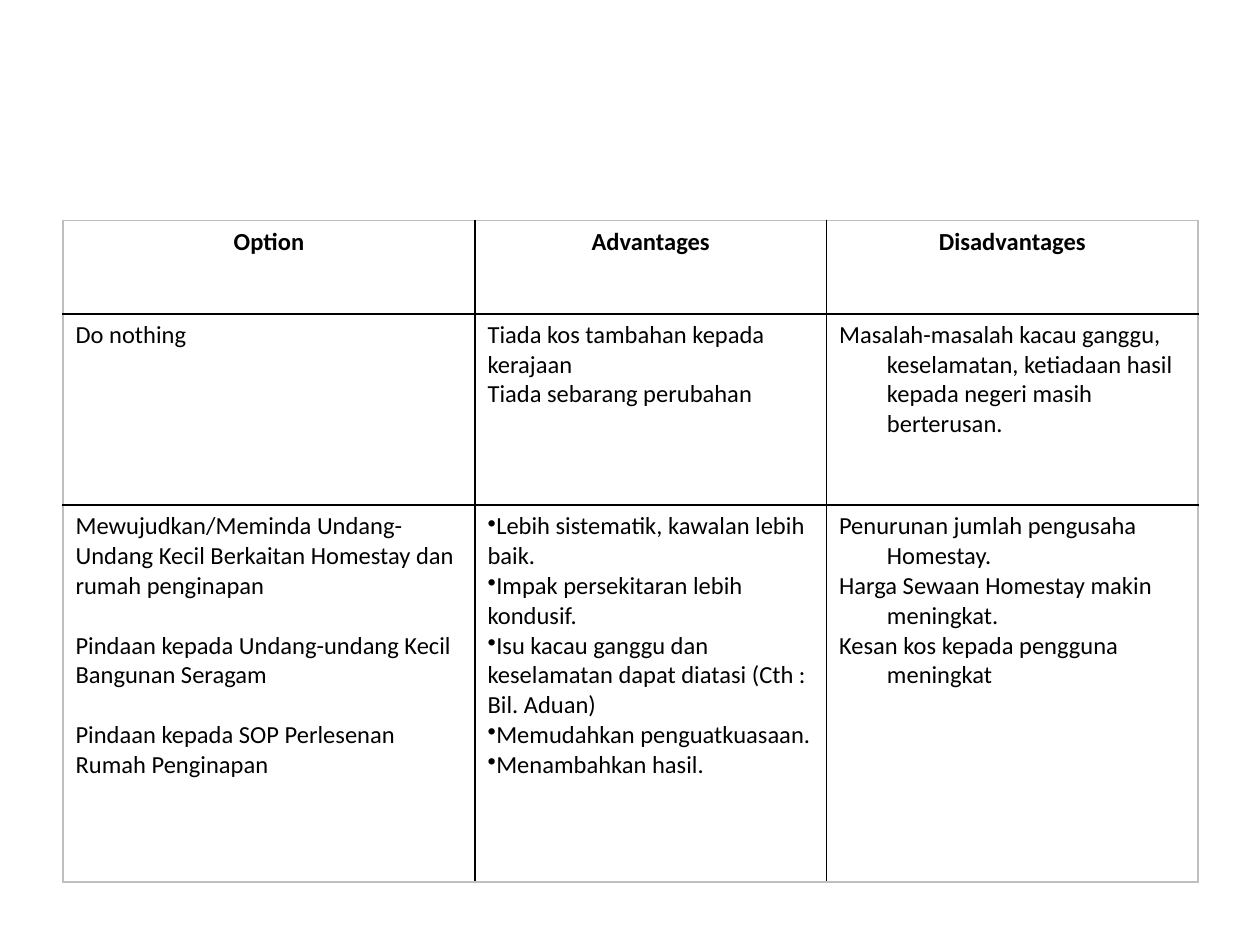
from lxml.etree import SubElement
from pptx import Presentation
from pptx.dml.color import RGBColor
from pptx.enum.text import PP_ALIGN
from pptx.oxml import parse_xml
from pptx.oxml.ns import nsdecls, qn
from pptx.util import Inches, Pt

COLUMN_WIDTHS = [3.27, 2.79, 2.95]
ROW_HEIGHTS = [0.74, 1.52, 2.99]
HANGING = 0.38
LINE_GAP = 17
BLACK, GREY, WHITE = "000000", "BFBFBF", "FFFFFF"

HEADINGS = ["Option", "Advantages", "Disadvantages"]
OPTIONS = [
    [
        ["Do nothing"],
        ["Tiada kos tambahan kepada kerajaan", "Tiada sebarang perubahan"],
        ["Masalah-masalah kacau ganggu, keselamatan, ketiadaan hasil "
         "kepada negeri masih berterusan."],
    ],
    [
        ["Mewujudkan/Meminda Undang-Undang Kecil Berkaitan Homestay dan rumah penginapan",
         "Pindaan kepada Undang-undang Kecil Bangunan Seragam",
         "Pindaan kepada SOP Perlesenan Rumah Penginapan"],
        ["Lebih sistematik, kawalan lebih baik.",
         "Impak persekitaran lebih kondusif.",
         "Isu kacau ganggu dan keselamatan dapat diatasi (Cth : Bil. Aduan)",
         "Memudahkan penguatkuasaan.",
         "Menambahkan hasil."],
        ["Penurunan jumlah pengusaha Homestay.",
         "Harga Sewaan Homestay makin meningkat.",
         "Kesan kos kepada pengguna meningkat"],
    ],
]


def colour(value):
    return RGBColor.from_string(value)


def add_border(cell, position, side, value, width):
    line = parse_xml(
        f'<a:{side} {nsdecls("a")} w="{Pt(width)}"><a:solidFill>'
        f'<a:srgbClr val="{value}"/></a:solidFill></a:{side}>'
    )
    cell._tc.get_or_add_tcPr().insert(position, line)


def style_cell(cell, row, column):
    cell.fill.solid()
    cell.fill.fore_color.rgb = colour(WHITE)
    last_row, last_column = len(ROW_HEIGHTS) - 1, len(COLUMN_WIDTHS) - 1
    outer, inner, heading = (GREY, 1.5), (BLACK, 1), (BLACK, 1.5)
    below_heading = {0: (GREY, 1), 1: heading}
    borders = {
        "lnL": outer if column == 0 else inner,
        "lnR": outer if column == last_column else inner,
        "lnT": below_heading.get(row, inner),
        "lnB": outer if row == last_row else below_heading.get(row + 1, inner),
    }
    for position, (side, (value, width)) in enumerate(borders.items()):
        add_border(cell, position, side, value, width)


def fill_cell(cell, texts, bold=False, align=PP_ALIGN.LEFT, hanging=0, bullet=None, gap=0):
    frame = cell.text_frame
    for index, text in enumerate(texts):
        para = frame.paragraphs[0] if index == 0 else frame.add_paragraph()
        para.text = text
        para.alignment = align
        para.space_before = Pt(gap if index else 0)
        properties = para._p.get_or_add_pPr()
        properties.set("marL", str(Inches(hanging)))
        properties.set("indent", str(-Inches(hanging)))
        if bullet:
            SubElement(properties, qn("a:buChar")).set("char", bullet)
        font = para.font
        font.name, font.size, font.bold = "Calibri", Pt(14), bold
        font.color.rgb = colour(BLACK)


def add_options_table(page):
    frame = page.shapes.add_table(
        len(ROW_HEIGHTS), len(COLUMN_WIDTHS),
        Inches(0.5), Inches(1.75), Inches(9), Inches(5.25),
    )
    table = frame.table
    table.first_row = table.horz_banding = False
    for column, width in zip(table.columns, COLUMN_WIDTHS):
        column.width = Inches(width)
    for row, height in zip(table.rows, ROW_HEIGHTS):
        row.height = Inches(height)
    for row in range(len(ROW_HEIGHTS)):
        for column in range(len(COLUMN_WIDTHS)):
            style_cell(table.cell(row, column), row, column)
    return table


def main():
    deck = Presentation()
    deck.slide_width, deck.slide_height = Inches(10), Inches(7.5)
    page = deck.slides.add_slide(deck.slide_layouts[6])
    table = add_options_table(page)
    for column, heading in enumerate(HEADINGS):
        fill_cell(table.cell(0, column), [heading], bold=True, align=PP_ALIGN.CENTER)
    for row, (option, advantages, disadvantages) in enumerate(OPTIONS, start=1):
        fill_cell(table.cell(row, 0), option, gap=LINE_GAP)
        fill_cell(table.cell(row, 1), advantages, bullet="•" if row == 2 else None)
        fill_cell(table.cell(row, 2), disadvantages, hanging=HANGING)
    deck.save("out.pptx")


if __name__ == "__main__":
    main()
